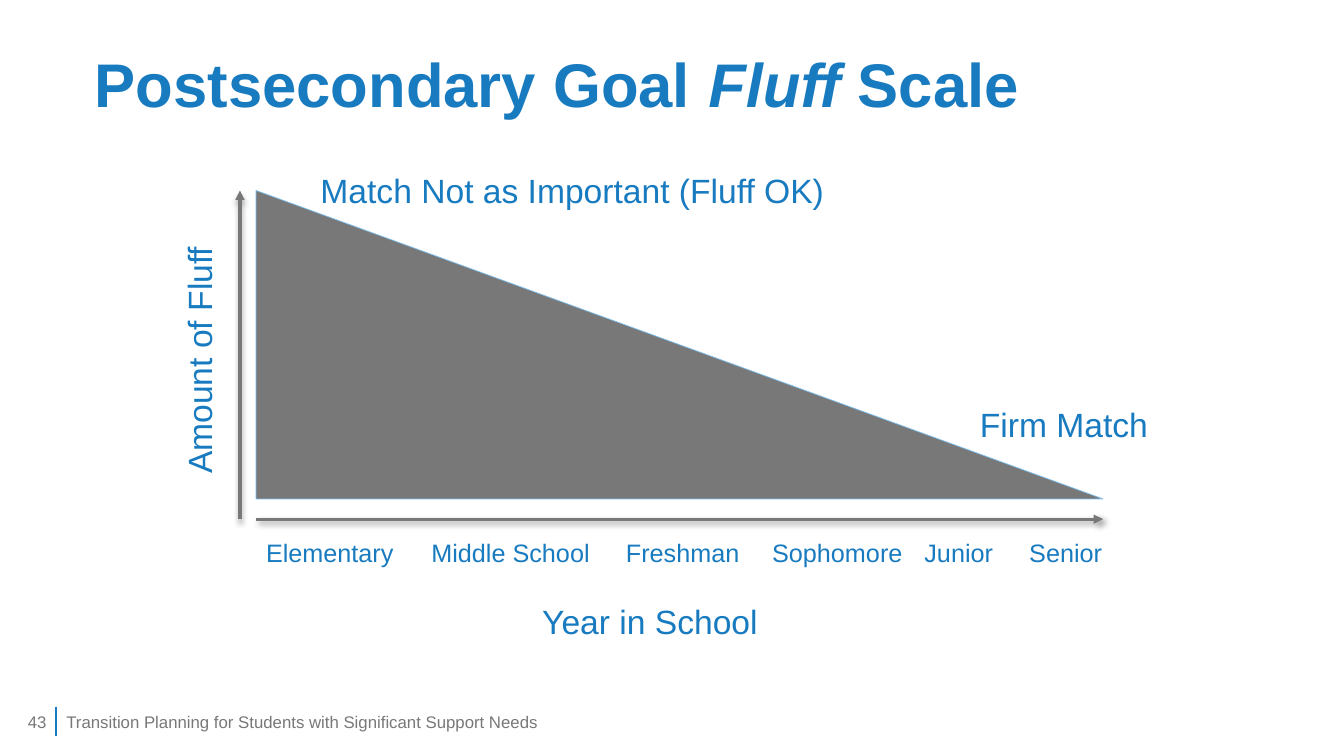
from lxml.etree import SubElement
from pptx import Presentation
from pptx.dml.color import RGBColor
from pptx.enum.shapes import MSO_CONNECTOR, MSO_SHAPE
from pptx.enum.text import MSO_ANCHOR, MSO_AUTO_SIZE, PP_ALIGN
from pptx.oxml.ns import qn
from pptx.util import Pt

BLUE = RGBColor(0x18, 0x7B, 0xC0)
PALE_BLUE = RGBColor(0x7C, 0xC0, 0xEF)
GRAY = RGBColor(0x78, 0x78, 0x78)
WHITE = RGBColor(0xFF, 0xFF, 0xFF)
EMU_PER_PX = 9144
FONT = "Arial"


def px(*lengths):
    return [length * EMU_PER_PX for length in lengths]


class ScaleSlide:
    def __init__(self, deck):
        self.slide = deck.slides.add_slide(deck.slide_layouts[5])
        self.shapes = self.slide.shapes

    def style(self, paragraph, size, color, bold=False):
        font = paragraph.font
        font.name, font.size, font.bold = FONT, Pt(size), bold
        font.color.rgb = color

    def title(self, box, runs):
        heading = self.shapes.title
        heading.left, heading.top, heading.width, heading.height = px(*box)
        heading.fill.solid()
        heading.fill.fore_color.rgb = WHITE
        frame = heading.text_frame
        frame.auto_size = MSO_AUTO_SIZE.NONE
        frame.vertical_anchor = MSO_ANCHOR.MIDDLE
        paragraph = frame.paragraphs[0]
        paragraph.alignment = PP_ALIGN.LEFT
        paragraph.line_spacing = 0.9
        self.style(paragraph, 44, BLUE, bold=True)
        for words, italic in runs:
            run = paragraph.add_run()
            run.text = words
            run.font.italic = italic

    def text(self, box, words, size=24, color=BLUE, align=PP_ALIGN.LEFT,
             anchor=MSO_ANCHOR.TOP, upward=False):
        frame = self.shapes.add_textbox(*px(*box)).text_frame
        frame.word_wrap = True
        frame.vertical_anchor = anchor
        if upward:
            frame._txBody.bodyPr.set("vert", "vert270")
        paragraph = frame.paragraphs[0]
        paragraph.text = words
        paragraph.alignment = align
        self.style(paragraph, size, color)

    def triangle(self, box):
        wedge = self.shapes.add_shape(MSO_SHAPE.RIGHT_TRIANGLE, *px(*box))
        wedge.shadow.inherit = False
        wedge.fill.solid()
        wedge.fill.fore_color.rgb = GRAY
        wedge.line.color.rgb = PALE_BLUE
        wedge.line.width = Pt(0.5)

    def line(self, ends, color, width):
        rule = self.shapes.add_connector(MSO_CONNECTOR.STRAIGHT, *px(*ends))
        rule.line.color.rgb = color
        rule.line.width = Pt(width)
        effects = SubElement(rule._element.spPr, qn("a:effectLst"))
        return rule, effects

    def arrow(self, ends, shadow_angle):
        axis, effects = self.line(ends, GRAY, 2.25)
        SubElement(axis.line._get_or_add_ln(), qn("a:tailEnd"), type="triangle")
        shadow = SubElement(effects, qn("a:outerShdw"), blurRad=str(Pt(4)),
                            dist=str(Pt(3)), dir=str(shadow_angle * 60000),
                            rotWithShape="0")
        black = SubElement(shadow, qn("a:srgbClr"), val="000000")
        SubElement(black, qn("a:alpha"), val="40000")


def main():
    deck = Presentation()
    deck.slide_width, deck.slide_height = px(1333, 750)
    scale = ScaleSlide(deck)

    scale.title((84, 15, 1124, 143), [
        ("Postsecondary Goal ", False), ("Fluff ", True), ("Scale", False)])

    scale.triangle((254, 189, 840, 306))
    scale.arrow((254, 515, 1094, 515), 45)
    scale.arrow((238, 515, 238, 189), 90)

    scale.text((308, 164, 575, 51), "Match Not as Important (Fluff OK)")
    scale.text((962, 396, 192, 51), "Firm Match")
    scale.text((172, 196, 61, 323), "Amount of Fluff",
               align=PP_ALIGN.CENTER, upward=True)
    scale.text((528, 591, 244, 50), "Year in School")

    for left, width, year in [
            (254, 179, "Elementary"), (418, 178, "Middle School"),
            (611, 144, "Freshman"), (756, 151, "Sophomore"),
            (907, 105, "Junior"), (1011, 93, "Senior")]:
        scale.text((left, 528, width, 40), year, size=18)

    scale.line((56, 701, 56, 730), BLUE, 1.5)
    scale.text((0, 696, 56, 40), "43", 12, GRAY,
               PP_ALIGN.RIGHT, MSO_ANCHOR.MIDDLE)
    scale.text((56, 696, 652, 40),
               "Transition Planning for Students with Significant Support Needs",
               12, GRAY, anchor=MSO_ANCHOR.MIDDLE)

    deck.save("out.pptx")


if __name__ == "__main__":
    main()
